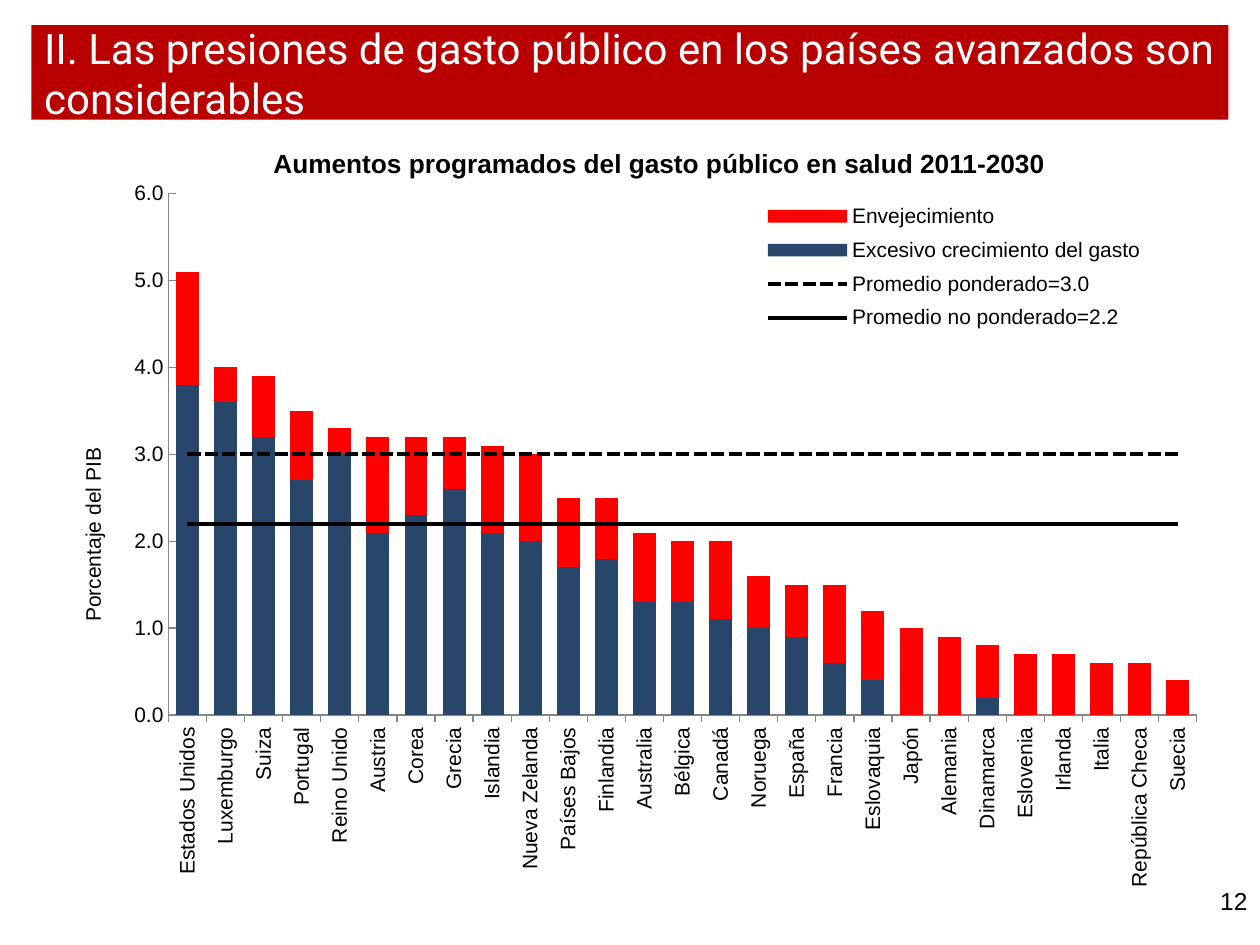
from dataclasses import dataclass
from lxml.etree import SubElement
from pptx import Presentation
from pptx.chart.data import CategoryChartData
from pptx.dml.color import RGBColor
from pptx.enum.chart import XL_CHART_TYPE as Kind, XL_LEGEND_POSITION as Side
from pptx.enum.chart import XL_MARKER_STYLE as Mark, XL_TICK_MARK as Tick
from pptx.enum.dml import MSO_LINE_DASH_STYLE as Dash
from pptx.enum.shapes import MSO_SHAPE as Shape
from pptx.enum.text import MSO_ANCHOR as Anchor, MSO_AUTO_SIZE as Fit, PP_ALIGN as Align
from pptx.oxml import parse_xml
from pptx.oxml.ns import nsdecls, qn
from pptx.util import Inches, Pt

TITLE = "II. Las presiones de gasto público en los países avanzados son considerables"
HEAD = "Aumentos programados del gasto público en salud 2011-2030"
PAGE = "12"
UNIT = "Porcentaje del PIB"
BARS = ("Excesivo crecimiento del gasto", "Envejecimiento")
ROWS = [
    ("Estados Unidos", 3.8, 1.3), ("Luxemburgo", 3.6, 0.4), ("Suiza", 3.2, 0.7),
    ("Portugal", 2.7, 0.8), ("Reino Unido", 3.0, 0.3), ("Austria", 2.1, 1.1),
    ("Corea", 2.3, 0.9), ("Grecia", 2.6, 0.6), ("Islandia", 2.1, 1.0),
    ("Nueva Zelanda", 2.0, 1.0), ("Países Bajos", 1.7, 0.8), ("Finlandia", 1.8, 0.7),
    ("Australia", 1.3, 0.8), ("Bélgica", 1.3, 0.7), ("Canadá", 1.1, 0.9),
    ("Noruega", 1.0, 0.6), ("España", 0.9, 0.6), ("Francia", 0.6, 0.9),
    ("Eslovaquia", 0.4, 0.8), ("Japón", 0, 1.0), ("Alemania", 0, 0.9),
    ("Dinamarca", 0.2, 0.6), ("Eslovenia", 0, 0.7), ("Irlanda", 0, 0.7),
    ("Italia", 0, 0.6), ("República Checa", 0, 0.6), ("Suecia", 0, 0.4),
]
MEANS = [("Promedio ponderado=3.0", 3.0, Dash.SQUARE_DOT),
         ("Promedio no ponderado=2.2", 2.2, Dash.SOLID)]


@dataclass(frozen=True)
class Theme:
    face: str = "Arial"
    title_face: str = "Roboto"
    band: str = "B80000"
    ink: str = "000000"
    light: str = "FFFFFF"
    axis: str = "868686"
    bars: tuple = ("28466A", "FF0000")
    title: int = 24
    head: int = 15
    page: int = 14
    label: int = 12


T = Theme()
WIDE, HIGH = 10, 7.5
EDGE = WIDE / 40


def paint(font, size, color=T.ink, face=T.face, bold=False):
    font.size, font.name, font.bold = Pt(size), face, bold
    font.color.rgb = RGBColor.from_string(color)


def place(shape, *box):
    shape.left, shape.top, shape.width, shape.height = map(Inches, box)


def write(shape, text, align=Align.LEFT, anchor=Anchor.TOP, wrap=True,
          inset=None, fit=Fit.NONE, **font):
    frame = shape.text_frame
    frame.word_wrap, frame.auto_size, frame.vertical_anchor = wrap, fit, anchor
    if inset is not None:
        frame.margin_left = frame.margin_right = Inches(inset)
        frame.margin_top = frame.margin_bottom = Inches(inset)
    para = frame.paragraphs[0]
    para.alignment = align
    run = para.add_run()
    run.text = text
    paint(run.font, **font)


def set_layout(item, x, y, w, h, inner=False):
    """Fix a chart part at shares of the chart's size."""
    old = item.find(qn("c:layout"))
    if old is not None:
        item.remove(old)
    layout = parse_xml(f"<c:layout {nsdecls('c')}/>")
    manual = SubElement(layout, qn("c:manualLayout"))
    parts = [("layoutTarget", "inner")] if inner else []
    parts += [("xMode", "edge"), ("yMode", "edge"), ("x", x), ("y", y), ("w", w), ("h", h)]
    for tag, val in parts:
        SubElement(manual, qn(f"c:{tag}")).set("val", str(val))
    if inner:
        item.insert(0, layout)
    else:
        item.find(qn("c:legendPos")).addnext(layout)


def split_lines(chart):
    """Move the series after the bars to a line plot on the same axes."""
    bar = chart.plots[0]._element
    line = parse_xml(f'<c:lineChart {nsdecls("c")}><c:grouping val="standard"/>'
                     '<c:varyColors val="0"/></c:lineChart>')
    for ser in bar.findall(qn("c:ser"))[len(BARS):]:
        flag = ser.find(qn("c:invertIfNegative"))
        if flag is not None:
            ser.remove(flag)
        line.append(ser)
    SubElement(line, qn("c:marker")).set("val", "1")
    for axis in bar.findall(qn("c:axId")):
        SubElement(line, qn("c:axId")).set("val", axis.get("val"))
    bar.addnext(line)


def style_axes(chart):
    cat, val = chart.category_axis, chart.value_axis
    for axis, tick in ((cat, Tick.OUTSIDE), (val, Tick.INSIDE)):
        axis.major_tick_mark, axis.minor_tick_mark = tick, Tick.NONE
        axis.has_major_gridlines = False
        axis.format.line.color.rgb = RGBColor.from_string(T.axis)
        paint(axis.tick_labels.font, T.label)
    cat._element.find(qn("c:txPr")).find(qn("a:bodyPr")).set("rot", "-5400000")
    val.minimum_scale, val.maximum_scale, val.major_unit = 0, 6, 1
    val.tick_labels.number_format = "0.0"
    val.tick_labels.number_format_is_linked = False
    run = val.axis_title.text_frame.paragraphs[0].add_run()
    run.text = UNIT
    paint(run.font, T.label)


def add_graph(slide, *box):
    names, *cols = zip(*ROWS)
    data = CategoryChartData(number_format="0.0")
    data.categories = names
    for name, vals in zip(BARS, cols):
        data.add_series(name, vals)
    for name, mean, _ in MEANS:
        data.add_series(name, [mean] * len(ROWS))
    chart = slide.shapes.add_chart(Kind.COLUMN_STACKED, *map(Inches, box), data).chart
    paint(chart.font, T.label)
    chart.has_title = False
    split_lines(chart)
    bars, lines = chart.plots
    bars.gap_width, bars.overlap, bars.vary_by_categories = 66, 100, False
    for ser, color in zip(bars.series, T.bars):
        ser.format.fill.solid()
        ser.format.fill.fore_color.rgb = RGBColor.from_string(color)
    for ser, (_, _, dash) in zip(lines.series, MEANS):
        ser.smooth, ser.marker.style = False, Mark.NONE
        pen = ser.format.line
        pen.width, pen.dash_style = Pt(2.5), dash
        pen.color.rgb = RGBColor.from_string(T.ink)
    style_axes(chart)
    chart.has_legend = True
    key = chart.legend
    key.position, key.include_in_layout = Side.RIGHT, False
    paint(key.font, T.label)
    set_layout(key._element, 0.6, 0.02, 0.36, 0.2)
    set_layout(bars._element.getparent(), 0.1, 0.02, 0.89, 0.71, inner=True)


def main():
    deck = Presentation()
    deck.slide_width, deck.slide_height = Inches(WIDE), Inches(HIGH)
    slide = deck.slides.add_slide(deck.slide_layouts[5])
    shapes, title = slide.shapes, slide.shapes.title
    wide = WIDE - 2 * EDGE

    band = shapes.add_shape(Shape.RECTANGLE, 0, 0, 0, 0)
    place(band, EDGE, 0.2, wide, HIGH / 10)
    band.shadow.inherit = False
    band.fill.solid()
    band.fill.fore_color.rgb = RGBColor.from_string(T.band)
    band.line.fill.background()

    add_graph(slide, 0.42, 1.42, 9.17, 5.83)

    band._element.addnext(title._element)
    place(title, EDGE, -0.05, wide, HIGH / 6)
    write(title, TITLE, anchor=Anchor.MIDDLE, size=T.title, face=T.title_face, color=T.light)

    page, head = (shapes.add_textbox(0, 0, 0, 0) for _ in range(2))
    place(page, 7.67, 6.98, 2.33, 0.52)
    write(page, PAGE, align=Align.RIGHT, size=T.page)
    place(head, 2.17, 1.17, 6.17, 0.25)
    write(head, HEAD, wrap=False, inset=0, fit=Fit.SHAPE_TO_FIT_TEXT, size=T.head, bold=True)
    deck.save("out.pptx")


if __name__ == "__main__":
    main()
